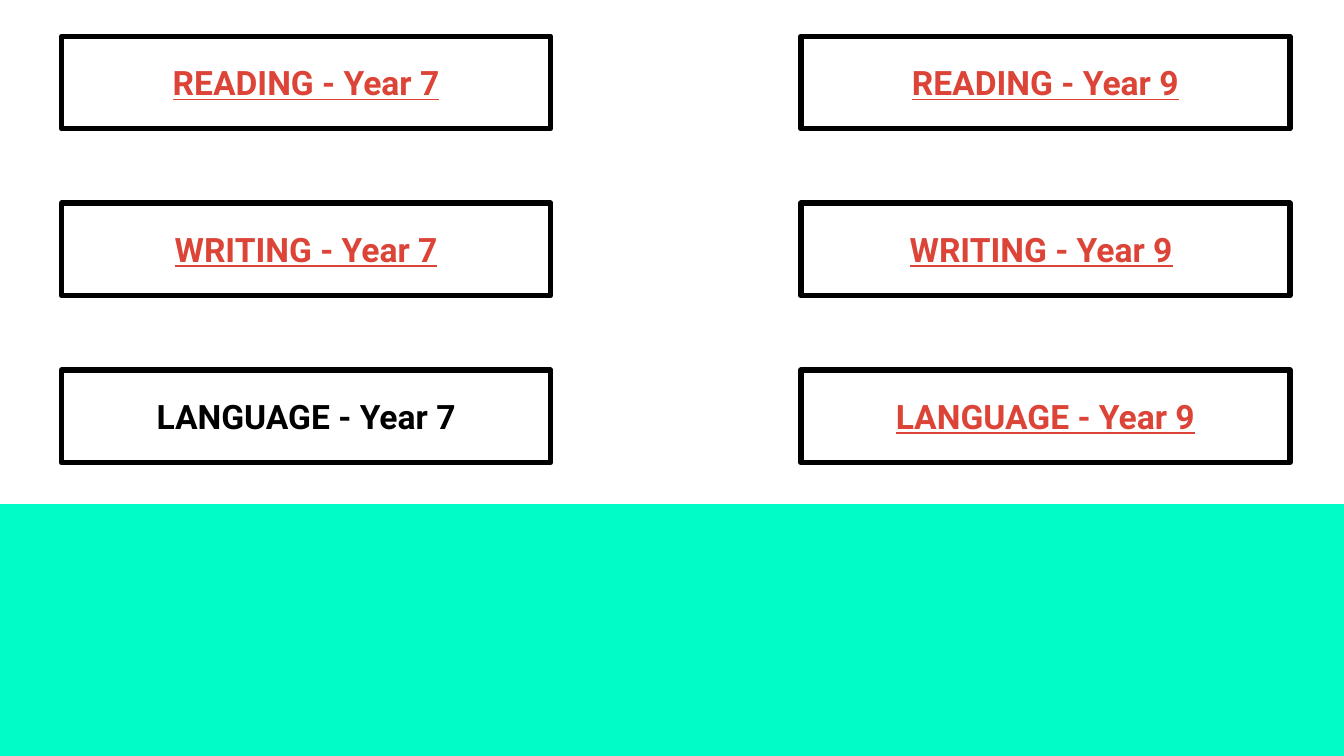
from lxml.etree import SubElement
from pptx import Presentation
from pptx.dml.color import RGBColor
from pptx.enum.shapes import MSO_SHAPE
from pptx.enum.text import MSO_ANCHOR, PP_ALIGN
from pptx.oxml.ns import qn
from pptx.util import Pt

COLORS = {"background": "00FDC8", "panel": "FFFFFF", "ink": "000000", "link": "DB4437"}


class SlideBuilder:
    font_name = "Roboto"
    font_size = 18
    border_width = 3
    inset = 7.2

    def __init__(self, slide):
        self.slide = slide

    def color(self, name):
        return RGBColor.from_string(COLORS[name])

    def background(self, color):
        fill = self.slide.background.fill
        fill.solid()
        fill.fore_color.rgb = self.color(color)

    def rectangle(self, left, top, width, height):
        shape = self.slide.shapes.add_shape(
            MSO_SHAPE.RECTANGLE, Pt(left), Pt(top), Pt(width), Pt(height))
        shape.shadow.inherit = False
        return shape

    def panel(self, left, top, width, height):
        panel = self.rectangle(left, top, width, height)
        panel.fill.solid()
        panel.fill.fore_color.rgb = self.color("panel")
        panel.line.fill.background()

    def style_run(self, run, color, underline):
        run.font.name = self.font_name
        run.font.size = Pt(self.font_size)
        run.font.bold = True
        run.font.underline = underline
        run.font.color.rgb = self.color(color)

    def button(self, label, left, top, width, height, linked=True, suffix=""):
        button = self.rectangle(left, top, width, height)
        button.fill.background()
        button.line.color.rgb = self.color("ink")
        button.line.width = Pt(self.border_width)
        SubElement(button.line._get_or_add_ln(), qn("a:round"))

        frame = button.text_frame
        frame.margin_left = frame.margin_right = Pt(self.inset)
        frame.margin_top = frame.margin_bottom = Pt(self.inset)
        frame.vertical_anchor = MSO_ANCHOR.MIDDLE
        frame.word_wrap = True
        frame.text = label
        paragraph = frame.paragraphs[0]
        paragraph.alignment = PP_ALIGN.CENTER
        self.style_run(paragraph.runs[0], "link" if linked else "ink", linked)
        if suffix:
            trailing = paragraph.add_run()
            trailing.text = suffix
            self.style_run(trailing, "ink", False)


def main():
    presentation = Presentation()
    presentation.slide_width, presentation.slide_height = Pt(720), Pt(405)
    builder = SlideBuilder(presentation.slides.add_slide(presentation.slide_layouts[6]))

    # Backdrop
    builder.background("background")
    builder.panel(0, 0, 720, 270)

    # One column per year, one row per subject
    year_lefts = {"Year 7": 33, "Year 9": 429}
    first_top, row_pitch = 19.5, 89.4
    unlinked = {"LANGUAGE - Year 7"}
    suffixes = {"WRITING - Year 9": " "}
    for year, left in year_lefts.items():
        for row, subject in enumerate(("READING", "WRITING", "LANGUAGE")):
            label = f"{subject} - {year}"
            builder.button(label, left, first_top + row * row_pitch, 262, 49.5,
                           linked=label not in unlinked, suffix=suffixes.get(label, ""))

    presentation.save("out.pptx")


if __name__ == "__main__":
    main()
